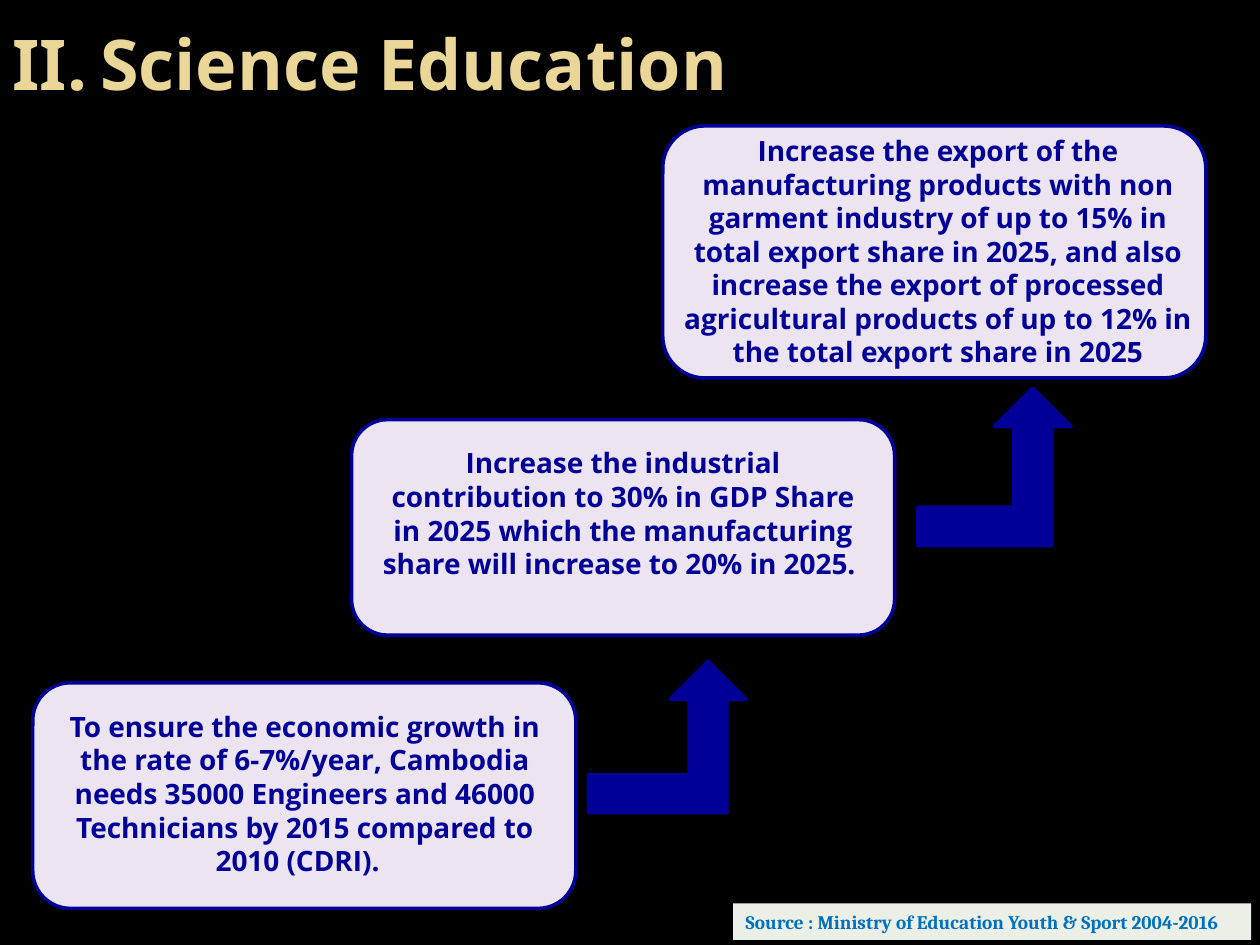
from lxml import etree
from pptx import Presentation
from pptx.dml.color import RGBColor
from pptx.enum.shapes import MSO_SHAPE
from pptx.enum.text import MSO_ANCHOR, MSO_AUTO_SIZE, PP_ALIGN
from pptx.oxml.ns import qn
from pptx.util import Pt

BLACK = RGBColor(0x00, 0x00, 0x00)
NAVY = RGBColor(0x00, 0x00, 0x99)
LILAC = RGBColor(0xED, 0xE4, 0xF1)
GOLD = RGBColor(0xEA, 0xD6, 0x96)
BLUE = RGBColor(0x00, 0x70, 0xC0)
PALE_GREEN = RGBColor(0xEB, 0xEF, 0xE6)

ROUNDED = MSO_SHAPE.ROUNDED_RECTANGLE
BENT_UP = MSO_SHAPE.BENT_UP_ARROW
RECTANGLE = MSO_SHAPE.RECTANGLE
LEFT, CENTER = PP_ALIGN.LEFT, PP_ALIGN.CENTER
MIDDLE, TOP = MSO_ANCHOR.MIDDLE, MSO_ANCHOR.TOP
NO_AUTOFIT = MSO_AUTO_SIZE.NONE

STEP_FONT = {"name": "Open Sans", "size": Pt(16), "bold": True}
TITLE_FONT = {"name": "Noto Sans", "size": Pt(40), "bold": True}
SOURCE_FONT = {"name": "Cambria", "size": Pt(11), "bold": True}

prs = Presentation()
prs.slide_width, prs.slide_height = Pt(720), Pt(540)
slide = prs.slides.add_slide(prs.slide_layouts[5])
slide.background.fill.solid()
slide.background.fill.fore_color.rgb = BLACK


def add_block(preset, box, fill, outline=None):
    block = slide.shapes.add_shape(preset, *map(Pt, box))
    block.shadow.inherit = False
    block.fill.solid()
    block.fill.fore_color.rgb = fill
    if outline is None:
        block.line.fill.background()
    else:
        block.line.color.rgb = outline
        block.line.width = Pt(2)
    return block


def write(holder, text, font, color, align, anchor):
    frame = holder.text_frame
    frame.word_wrap = True
    frame.auto_size = NO_AUTOFIT
    frame.vertical_anchor = anchor
    paragraph = frame.paragraphs[0]
    paragraph.alignment = align
    run = paragraph.add_run()
    run.text = text
    for key, value in font.items():
        setattr(run.font, key, value)
    run.font.color.rgb = color
    return paragraph


# Title, numbered from II
title = slide.shapes.title
title.left, title.top, title.width, title.height = Pt(0), Pt(0), Pt(720), Pt(72)
heading = write(title, "Science Education", TITLE_FONT, GOLD, LEFT, MIDDLE)
numbering = heading._p.get_or_add_pPr()
numbering.set("marL", str(Pt(50)))
numbering.set("indent", str(Pt(-50)))
etree.SubElement(numbering, qn("a:buFont"), typeface="+mj-lt")
etree.SubElement(numbering, qn("a:buAutoNum"), type="romanUcPeriod", startAt="2")

# Three rising steps: panel box, text box, wording
steps = [
    ((18.7, 390.2, 310.3, 128.9), (25.9, 401.8, 296.6, 104.4),
     "To ensure the economic growth in the rate of 6-7%/year, Cambodia needs "
     "35000 Engineers and 46000 Technicians by 2015 compared to 2010 (CDRI).  "),
    ((200.9, 239.8, 310.3, 123.1), (210.2, 251.3, 291.6, 104.4),
     "Increase the industrial contribution to 30% in GDP Share in 2025 which "
     "the manufacturing share will increase to 20% in 2025. "),
    ((378.7, 72, 310.3, 144), (378.7, 72.7, 314.6, 143.3),
     "Increase the export of the manufacturing products with non garment "
     "industry of up to 15% in total export share in 2025, and also increase "
     "the export of processed agricultural products of up to 12% in the total "
     "export share in 2025"),
]
for panel_box, text_box, goal in steps:
    add_block(ROUNDED, panel_box, LILAC, NAVY)
    goal_box = slide.shapes.add_textbox(*map(Pt, text_box))
    write(goal_box, goal, STEP_FONT, NAVY, CENTER, TOP).line_spacing = Pt(19.2)

# Arrows leading up to the next step
for arrow_box in [(336.2, 378, 90, 86.4), (524.2, 221.8, 87.8, 90)]:
    add_block(BENT_UP, arrow_box, NAVY, NAVY)

# Source note
source = add_block(RECTANGLE, (419, 516.2, 295.9, 20.9), PALE_GREEN)
write(source, "Source : Ministry of Education Youth & Sport 2004-2016",
      SOURCE_FONT, BLUE, LEFT, MIDDLE)

prs.save("out.pptx")
